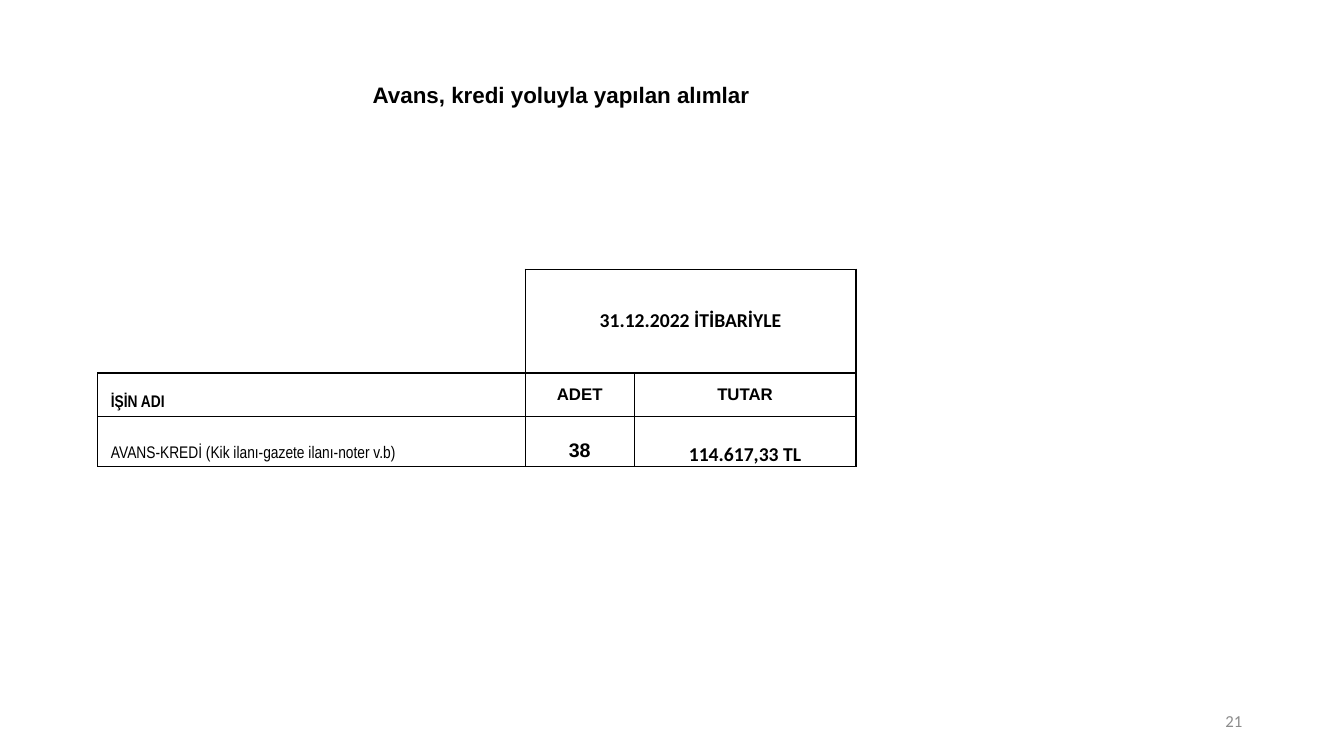
"""Builds the slide on purchases made through advances and credit."""
from dataclasses import dataclass

from lxml import etree
from pptx import Presentation
from pptx import util as u
from pptx.dml.color import RGBColor
from pptx.enum import text
from pptx.oxml.ns import qn

ALIGN = text.PP_ALIGN
ANCHOR = text.MSO_ANCHOR


@dataclass(frozen=True)
class Theme:
    ink: str = "000000"
    muted: str = "8C8C8C"
    sans: str = "Arial"
    narrow: str = "Arial Narrow"
    figures: str = "Calibri"
    title_size: int = 16
    large_size: int = 14
    small_size: int = 12
    border_width: int = 1


class SlideBuilder:
    def __init__(self, slide, theme):
        self.slide = slide
        self.theme = theme

    def set_text(self, frame, wording, size, face, color, bold=False, align=ALIGN.LEFT):
        frame.word_wrap = True
        paragraph = frame.paragraphs[0]
        paragraph.text = wording
        paragraph.alignment = align
        font = paragraph.font
        font.size, font.name, font.bold = u.Pt(size), face, bold
        font.color.rgb = RGBColor.from_string(color)

    def title(self, wording, box):
        heading = self.slide.shapes.title
        heading.left, heading.top, heading.width, heading.height = map(u.Inches, box)
        heading.text_frame.vertical_anchor = ANCHOR.MIDDLE
        self.set_text(heading.text_frame, wording, self.theme.title_size,
                      self.theme.sans, self.theme.ink, True, ALIGN.CENTER)

    def page_number(self, number, box):
        frame = self.slide.shapes.add_textbox(*map(u.Inches, box)).text_frame
        frame.vertical_anchor = ANCHOR.MIDDLE
        self.set_text(frame, number, self.theme.small_size, self.theme.figures,
                      self.theme.muted, align=ALIGN.RIGHT)

    def border(self, cell, visible_sides):
        properties = cell._tc.get_or_add_tcPr()
        for side in "LRTB":
            line = etree.SubElement(properties, qn(f"a:ln{side}"),
                                    w=str(u.Pt(self.theme.border_width)))
            if side in visible_sides:
                fill = etree.SubElement(line, qn("a:solidFill"))
                etree.SubElement(fill, qn("a:srgbClr"), val=self.theme.ink)
            else:
                etree.SubElement(line, qn("a:noFill"))

    def table(self, left, top, widths, heights):
        grid = self.slide.shapes.add_table(
            len(heights), len(widths), u.Inches(left), u.Inches(top),
            u.Inches(sum(widths)), u.Inches(sum(heights))).table
        grid.first_row = grid.horz_banding = False
        for column, width in zip(grid.columns, widths):
            column.width = u.Inches(width)
        for row, height in zip(grid.rows, heights):
            row.height = u.Inches(height)
        corner = grid.cell(0, 0)
        for cell in grid.iter_cells():
            self.border(cell, "RB" if cell == corner else "LRTB")
            cell.fill.background()
        return grid

    def cell(self, cell, wording, size, face, bold=True, align=ALIGN.CENTER,
             anchor=ANCHOR.MIDDLE, insets=(0.13, 0.05, 0.13, 0.05)):
        (cell.margin_left, cell.margin_top,
         cell.margin_right, cell.margin_bottom) = map(u.Inches, insets)
        cell.vertical_anchor = anchor
        self.set_text(cell.text_frame, wording, size, face, self.theme.ink, bold, align)


def main():
    deck = Presentation()
    deck.slide_width, deck.slide_height = u.Inches(13.33), u.Inches(7.5)
    theme = Theme()
    page = SlideBuilder(deck.slides.add_slide(deck.slide_layouts[5]), theme)
    large, small = theme.large_size, theme.small_size

    page.title("Avans, kredi yoluyla yapılan alımlar", (0, 0.75, 11.13, 0.37))
    page.page_number("21", (9.42, 6.95, 3, 0.4))

    purchases = page.table(0.97, 2.67, (4.24, 1.08, 2.2), (1.03, 0.43, 0.5))
    purchases.cell(0, 1).merge(purchases.cell(0, 2))
    page.cell(purchases.cell(0, 1), "31.12.2022 İTİBARİYLE", large, theme.figures)

    page.cell(purchases.cell(1, 0), "İŞİN ADI", small, theme.narrow,
              align=ALIGN.LEFT, anchor=ANCHOR.BOTTOM)
    for column, heading in enumerate(("ADET", "TUTAR"), start=1):
        page.cell(purchases.cell(1, column), heading, small, theme.sans)

    page.cell(purchases.cell(2, 0), "AVANS-KREDİ (Kik ilanı-gazete ilanı-noter v.b)",
              small, theme.narrow, bold=False, align=ALIGN.LEFT, anchor=ANCHOR.BOTTOM)
    page.cell(purchases.cell(2, 1), "38", large, theme.sans, anchor=ANCHOR.BOTTOM)
    page.cell(purchases.cell(2, 2), "114.617,33 TL", large, theme.figures,
              anchor=ANCHOR.BOTTOM, insets=(0.01, 0.01, 0.01, 0))

    deck.save("out.pptx")


if __name__ == "__main__":
    main()
